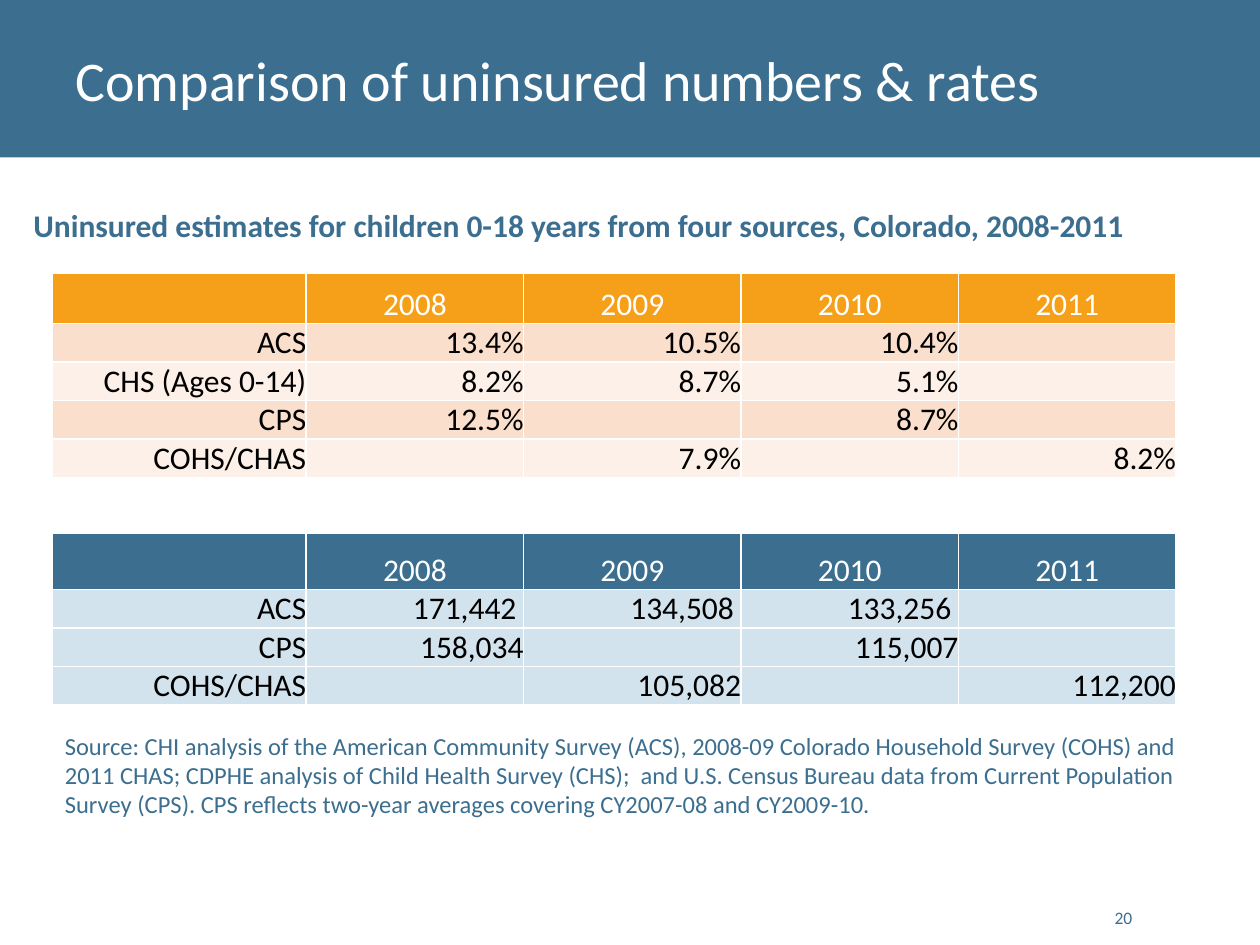
from pptx import Presentation
from pptx.dml.color import RGBColor
from pptx.enum.shapes import MSO_SHAPE
from pptx.enum.text import MSO_ANCHOR, PP_ALIGN
from pptx.util import Pt

BLUE = RGBColor(0x3B, 0x6E, 0x8F)
PALE_BLUE = RGBColor(0xD3, 0xE3, 0xED)
ORANGE = RGBColor(0xF6, 0xA0, 0x1A)
PEACH = RGBColor(0xFB, 0xDF, 0xCD)
PALE_PEACH = RGBColor(0xFD, 0xF0, 0xE8)
WHITE = RGBColor(0xFF, 0xFF, 0xFF)
BLACK = RGBColor(0, 0, 0)

YEARS = ["", "2008", "2009", "2010", "2011"]
RATES = [
    ["ACS", "13.4%", "10.5%", "10.4%", ""],
    ["CHS (Ages 0-14)", "8.2%", "8.7%", "5.1%", ""],
    ["CPS", "12.5%", "", "8.7%", ""],
    ["COHS/CHAS", "", "7.9%", "", "8.2%"],
]
COUNTS = [
    ["ACS", "171,442 ", "134,508 ", "133,256 ", ""],
    ["CPS", "158,034", "", "115,007", ""],
    ["COHS/CHAS", "", "105,082", "", "112,200"],
]
HEADING = "Uninsured estimates for children 0-18 years from four sources, Colorado, 2008-2011"
SOURCE = (
    "Source: CHI analysis of the American Community Survey (ACS), 2008-09 Colorado "
    "Household Survey (COHS) and 2011 CHAS; CDPHE analysis of Child Health Survey (CHS);  "
    "and U.S. Census Bureau data from Current Population Survey (CPS). CPS reflects "
    "two-year averages covering CY2007-08 and CY2009-10."
)


def style_paragraph(paragraph, size, color, align=PP_ALIGN.LEFT, bold=False):
    paragraph.alignment = align
    font = paragraph.font
    font.name = "Calibri"
    font.size = Pt(size)
    font.bold = bold
    font.color.rgb = color


def add_title_band(slide, left, top, width, height):
    band = slide.shapes.add_shape(
        MSO_SHAPE.RECTANGLE, Pt(left), Pt(top), Pt(width), Pt(height))
    band.shadow.inherit = False
    band.fill.solid()
    band.fill.fore_color.rgb = BLUE
    band.line.fill.background()
    tree = slide.shapes._spTree
    tree.remove(band._element)
    tree.insert(2, band._element)

    title = slide.shapes.title
    title.left, title.top = Pt(left + 36), Pt(top)
    title.width, title.height = Pt(width - 72), Pt(height)
    title.text_frame.text = "Comparison of uninsured numbers & rates"
    title.text_frame.vertical_anchor = MSO_ANCHOR.MIDDLE
    style_paragraph(title.text_frame.paragraphs[0], 32, WHITE)


def add_text(slide, left, top, width, height, text, size, bold=False, wrap=True,
             align=PP_ALIGN.LEFT, anchor=MSO_ANCHOR.TOP):
    box = slide.shapes.add_textbox(Pt(left), Pt(top), Pt(width), Pt(height))
    frame = box.text_frame
    frame.word_wrap = wrap
    frame.vertical_anchor = anchor
    frame.text = text
    style_paragraph(frame.paragraphs[0], size, BLUE, align, bold)


def fill_row(row, height, texts, fill, color, align):
    row.height = Pt(height)
    for column, (cell, text) in enumerate(zip(row.cells, texts)):
        cell.margin_left = cell.margin_right = cell.margin_top = cell.margin_bottom = 0
        cell.vertical_anchor = MSO_ANCHOR.BOTTOM
        if fill is None:
            cell.fill.background()
        else:
            cell.fill.solid()
            cell.fill.fore_color.rgb = fill
        cell.text = text
        style_paragraph(cell.text_frame.paragraphs[0], 18, color, align)


def add_estimates_table(slide, left, top, width, height):
    header, data = (WHITE, PP_ALIGN.CENTER), (BLACK, PP_ALIGN.RIGHT)
    rows = [(29, YEARS, ORANGE, *header)]
    rows += [(22, texts, (PEACH, PALE_PEACH)[i % 2], *data)
             for i, texts in enumerate(RATES)]
    rows += [(32, [""] * len(YEARS), None, *data), (32, YEARS, BLUE, *header)]
    rows += [(22, texts, PALE_BLUE, *data) for texts in COUNTS]

    table = slide.shapes.add_table(
        len(rows), len(YEARS), Pt(left), Pt(top), Pt(width), Pt(height)).table
    table.horz_banding = False
    label_width = 145
    year_width = (width - label_width) / (len(YEARS) - 1)
    for i, column in enumerate(table.columns):
        column.width = Pt(year_width if i else label_width)
    for row, values in zip(table.rows, rows):
        fill_row(row, *values)


def main():
    deck = Presentation()
    deck.slide_width, deck.slide_height = Pt(720), Pt(540)
    slide = deck.slides.add_slide(deck.slide_layouts[5])
    add_title_band(slide, 0, 0, 720, 90)
    add_estimates_table(slide, 30, 156, 642, 247)
    add_text(slide, 12, 114, 683, 29, HEADING, 18, bold=True, wrap=False)
    add_text(slide, 30, 414, 654, 58, SOURCE, 14)
    add_text(slide, 625, 505, 29, 29, "20", 10,
             align=PP_ALIGN.RIGHT, anchor=MSO_ANCHOR.BOTTOM)
    deck.save("out.pptx")


if __name__ == "__main__":
    main()
